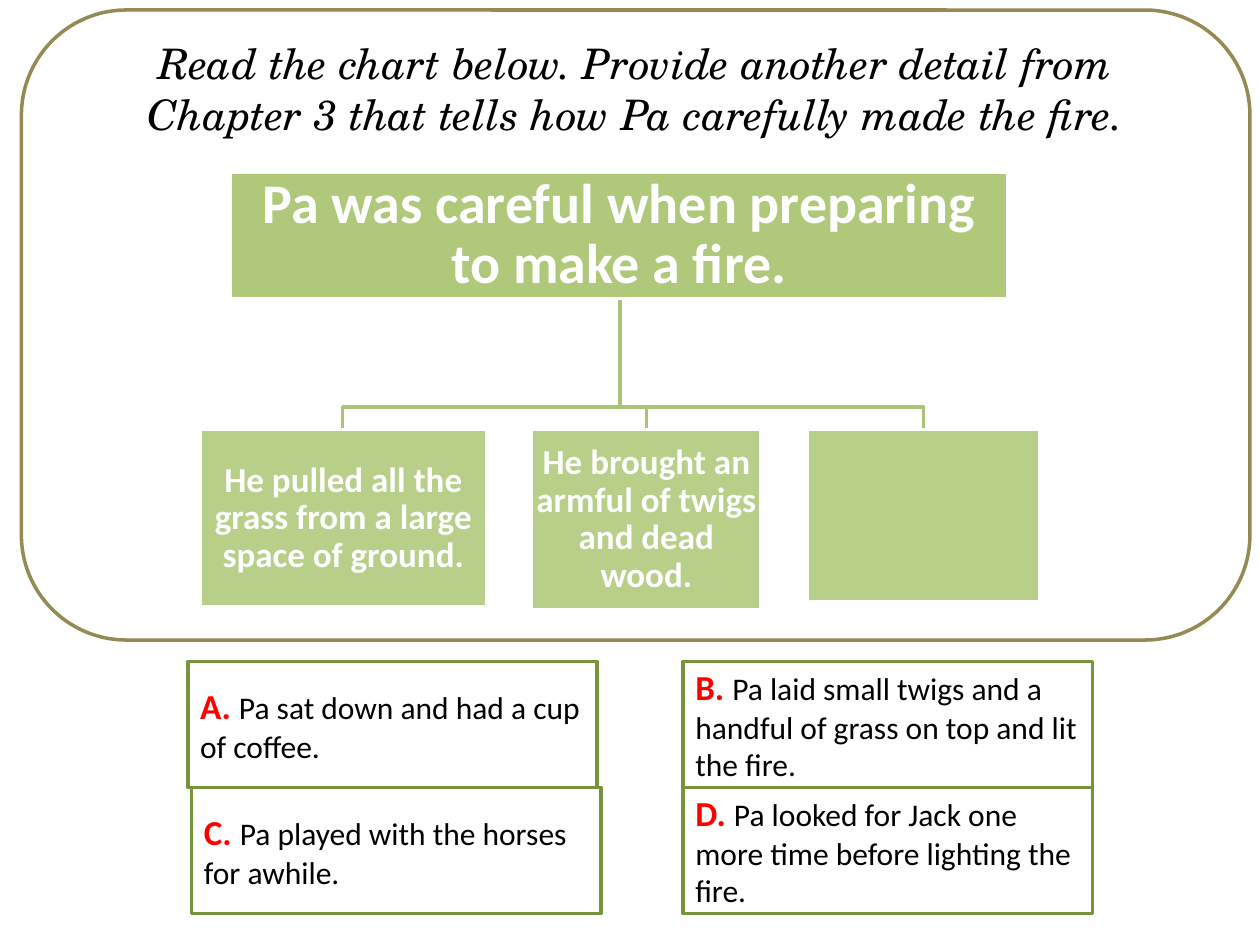
from lxml.etree import SubElement
from pptx import Presentation
from pptx.dml.color import RGBColor
from pptx.enum.shapes import MSO_SHAPE
from pptx.enum.text import MSO_ANCHOR, MSO_AUTO_SIZE, PP_ALIGN
from pptx.oxml.ns import qn
from pptx.util import Pt

PX = 9144
WHITE = RGBColor(0xFF, 0xFF, 0xFF)
BLACK = RGBColor(0x00, 0x00, 0x00)
RED = RGBColor(0xFF, 0x00, 0x00)
TAN = RGBColor(0x94, 0x8A, 0x54)
GREEN = RGBColor(0x9B, 0xBB, 0x59)
BRANCH_GREEN = RGBColor(0xA9, 0xC3, 0x79)
DARK_GREEN = RGBColor(0x77, 0x93, 0x3C)

DETAILS = [
    (0, 227, 141, "He pulled all the grass from a large space of ground."),
    (263, 182, 143, "He brought an armful of twigs and dead wood."),
    (482, 184, 137, ""),
]
ANSWERS = [
    (0, 0, "A. ", "Pa sat down and had a cup of coffee."),
    (3, 100, "C. ", "Pa played with the horses for awhile."),
    (393, 100, "D. ", "Pa looked for Jack one more time before lighting the fire."),
    (393, 0, "B. ", "Pa laid small twigs and a handful of grass on top and lit the fire."),
]


def add_box(shapes, kind, left, top, width, height, fill, line):
    box = shapes.add_shape(kind, left * PX, top * PX, width * PX, height * PX)
    box.shadow.inherit = False
    box.fill.solid()
    box.fill.fore_color.rgb = fill
    box.line.color.rgb = line
    box.line.width = Pt(2)
    return box


def add_span(para, text, size, color, bold=False, italic=False, name="Calibri"):
    span = para.add_run()
    span.text = text
    font = span.font
    font.name, font.size, font.bold, font.italic = name, Pt(size), bold, italic
    font.color.rgb = color


def set_title(page, left, top, width, height):
    title = page.shapes.title
    title.left, title.top = left * PX, top * PX
    title.width, title.height = width * PX, height * PX
    frame = title.text_frame
    frame.word_wrap = True
    frame.auto_size = MSO_AUTO_SIZE.NONE
    frame.vertical_anchor = MSO_ANCHOR.TOP
    para = frame.paragraphs[0]
    para.alignment = PP_ALIGN.CENTER
    add_span(para, "Read the chart below. Provide another detail from Chapter 3 "
             "that tells how Pa carefully made the fire.",
             24, BLACK, italic=True, name="TeX Gyre Schola")


def add_panel(page, left, top, width, height):
    panel = add_box(page.shapes, MSO_SHAPE.ROUNDED_RECTANGLE,
                    left, top, width, height, WHITE, TAN)
    page.shapes.title.element.addprevious(panel.element)


def add_node(shapes, left, top, width, height, text, size, inset, opacity):
    node = add_box(shapes, MSO_SHAPE.RECTANGLE, left, top, width, height, GREEN, WHITE)
    color = node.element.spPr.find(qn("a:solidFill"))[0]
    SubElement(color, qn("a:alpha")).set("val", str(opacity * 1000))
    if not text:
        return
    frame = node.text_frame
    frame.word_wrap = True
    frame.margin_left = frame.margin_right = inset * PX
    frame.margin_top = frame.margin_bottom = inset * PX
    frame.vertical_anchor = MSO_ANCHOR.MIDDLE
    para = frame.paragraphs[0]
    para.alignment = PP_ALIGN.CENTER
    para.line_spacing = 0.9
    add_span(para, text, size, WHITE, bold=True)


def add_branch(shapes, start_x, start_y, bend_y, end_x, end_y):
    builder = shapes.build_freeform(start_x, start_y, scale=PX)
    builder.add_line_segments(
        [(start_x, bend_y), (end_x, bend_y), (end_x, end_y)], close=False)
    branch = builder.convert_to_shape()
    branch.shadow.inherit = False
    branch.fill.background()
    branch.line.color.rgb = BRANCH_GREEN
    branch.line.width = Pt(2)


def add_tree(page, left, top):
    shapes = page.shapes.add_group_shape().shapes
    root_left, root_width, root_height = left + 24, 617, 100
    root_middle = root_left + (root_width + 1) // 2
    detail_top = top + 204
    for offset, width, _, _ in reversed(DETAILS):
        add_branch(shapes, root_middle, top + root_height, detail_top - 18,
                   left + offset + width // 2, detail_top)
    add_node(shapes, root_left, top, root_width, root_height,
             "Pa was careful when preparing to make a fire.", 32, 2, 80)
    for offset, width, height, text in DETAILS:
        add_node(shapes, left + offset, detail_top, width, height, text, 20, 1, 70)


def add_answers(page, left, top):
    for across, down, letter, text in ANSWERS:
        box = add_box(page.shapes, MSO_SHAPE.RECTANGLE, left + across, top + down,
                      325, 100, WHITE, DARK_GREEN)
        frame = box.text_frame
        frame.word_wrap = True
        frame.vertical_anchor = MSO_ANCHOR.MIDDLE
        para = frame.paragraphs[0]
        para.alignment = PP_ALIGN.LEFT
        add_span(para, letter, 20, RED, bold=True)
        add_span(para, text, 18, BLACK)


def main():
    deck = Presentation()
    deck.slide_width, deck.slide_height = 1000 * PX, 750 * PX
    page = deck.slides.add_slide(deck.slide_layouts[5])
    set_title(page, 54, 25, 900, 91)
    add_panel(page, 17, 8, 975, 500)
    add_tree(page, 159, 137)
    add_answers(page, 149, 525)
    deck.save("out.pptx")


if __name__ == "__main__":
    main()
